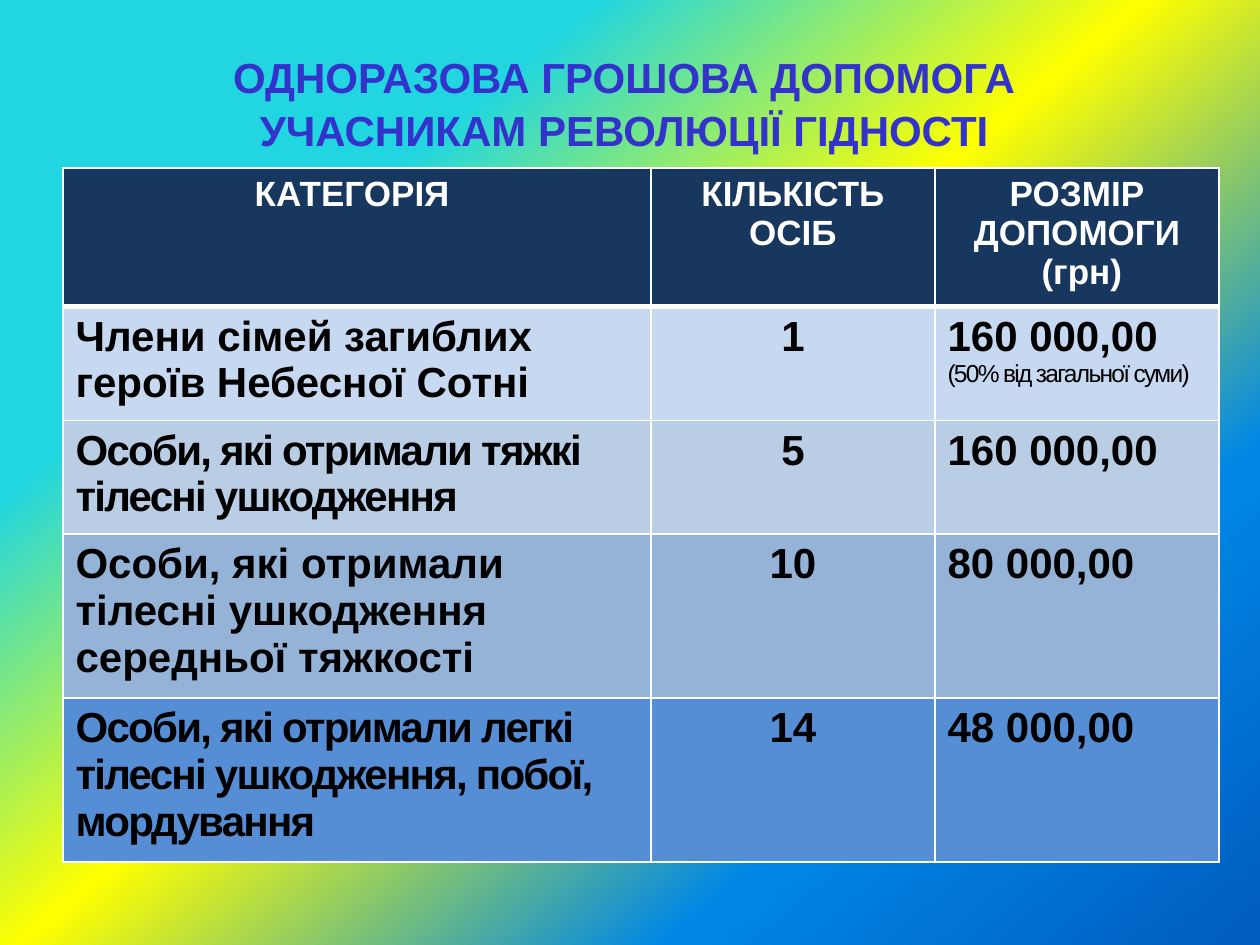
from lxml.etree import SubElement
from pptx import Presentation
from pptx.dml.color import RGBColor
from pptx.enum.text import PP_ALIGN as Align
from pptx.oxml.ns import qn
from pptx.util import Pt

EMU_PER_PX = 914400 / 126
COLORS = {"title": "3333CC", "header": "FFFFFF", "body": "000000", "border": "FFFFFF"}
GRADIENT = [(25, "21D6E0"), (48, "FFFF00"), (75, "0087E6"), (100, "005CBF")]
GRADIENT_ANGLE = 50
TITLE = ["ОДНОРАЗОВА ГРОШОВА ДОПОМОГА ", "УЧАСНИКАМ РЕВОЛЮЦІЇ ГІДНОСТІ "]
TITLE_BOX = (63, 42, 1134, 115)
TABLE_ORIGIN = (63, 168)
COLUMN_WIDTHS = [588, 284, 284]
ROW_HEIGHTS = [138, 114, 113, 164, 164]
ROW_FILLS = ["17375E", "C6D9F1", "B9CDE5", "95B3D7", "558ED5"]
HEADER = [["КАТЕГОРІЯ "], ["КІЛЬКІСТЬ ОСІБ"], ["РОЗМІР ДОПОМОГИ", " (грн)"]]
ROWS = [
    [["Члени сімей загиблих героїв Небесної Сотні"], ["1"],
     ["160 000,00", "(50% від загальної суми)"]],
    [["Особи, які отримали тяжкі тілесні ушкодження"], ["5"], ["160 000,00"]],
    [["Особи, які отримали тілесні ушкодження середньої тяжкості"], ["10"], ["80 000,00"]],
    [["Особи, які отримали легкі тілесні ушкодження, побої, мордування"], ["14"], ["48 000,00"]],
]
TIGHT_ROWS = {2, 4}
FORMATS = {
    "title": {"name": "Arial", "size": Pt(24), "bold": True},
    "header": {"name": "Arial", "size": Pt(20), "bold": True},
    "body": {"name": "Arial", "size": Pt(24), "bold": True},
    "note": {"name": "Arial", "size": Pt(14), "bold": False},
}


def px(value):
    return round(value * EMU_PER_PX)


def write(paragraph, text, style, align, tight=False):
    paragraph.alignment = align
    run = paragraph.add_run()
    run.text = text
    for name, value in FORMATS[style].items():
        setattr(run.font, name, value)
    run.font.color.rgb = RGBColor.from_string(COLORS.get(style, COLORS["body"]))
    if tight:
        run.font._element.set("spc", "-100")


def paragraphs_for(frame, texts):
    for index, text in enumerate(texts):
        yield index, text, frame.add_paragraph() if index else frame.paragraphs[0]


def paint_background(slide):
    fill = slide.background.fill
    fill.gradient()
    gradient = slide.background._cSld.find(".//" + qn("a:gradFill"))
    stops = gradient.find(qn("a:gsLst"))
    for stop in list(stops):
        stops.remove(stop)
    for position, color in GRADIENT:
        stop = SubElement(stops, qn("a:gs"), pos=str(position * 1000))
        SubElement(stop, qn("a:srgbClr"), val=color)
    gradient.find(qn("a:lin")).set("ang", str(GRADIENT_ANGLE * 60000))


def add_title(slide):
    frame = slide.shapes.add_textbox(*map(px, TITLE_BOX)).text_frame
    frame.word_wrap = True
    for _, text, paragraph in paragraphs_for(frame, TITLE):
        paragraph.line_spacing = 1.06
        write(paragraph, text, "title", Align.CENTER)


def style_cell(cell, row):
    properties = cell._tc.get_or_add_tcPr()
    for side in "LRTB":
        thick = (row, side) in {(0, "B"), (1, "T")}
        line = SubElement(properties, qn("a:ln" + side), w=str(Pt(3 if thick else 1)))
        SubElement(SubElement(line, qn("a:solidFill")), qn("a:srgbClr"), val=COLORS["border"])
    cell.fill.solid()
    cell.fill.fore_color.rgb = RGBColor.from_string(ROW_FILLS[row])


def add_table(slide):
    sizes = (sum(COLUMN_WIDTHS), sum(ROW_HEIGHTS))
    table = slide.shapes.add_table(
        len(ROW_HEIGHTS), len(COLUMN_WIDTHS), *map(px, TABLE_ORIGIN + sizes)).table
    for column, width in zip(table.columns, COLUMN_WIDTHS):
        column.width = px(width)
    for row, height in zip(table.rows, ROW_HEIGHTS):
        row.height = px(height)
    for row, contents in enumerate([HEADER] + ROWS):
        for column, texts in enumerate(contents):
            cell = table.cell(row, column)
            style_cell(cell, row)
            align = Align.CENTER if row == 0 or column == 1 else Align.LEFT
            for index, text, paragraph in paragraphs_for(cell.text_frame, texts):
                style = "header" if row == 0 else "note" if index else "body"
                tight = style == "note" or (column == 0 and row in TIGHT_ROWS)
                write(paragraph, text, style, align, tight)


def main():
    presentation = Presentation()
    presentation.slide_width, presentation.slide_height = px(1260), px(945)
    slide = presentation.slides.add_slide(presentation.slide_layouts[6])
    paint_background(slide)
    add_title(slide)
    add_table(slide)
    presentation.save("out.pptx")


if __name__ == "__main__":
    main()
